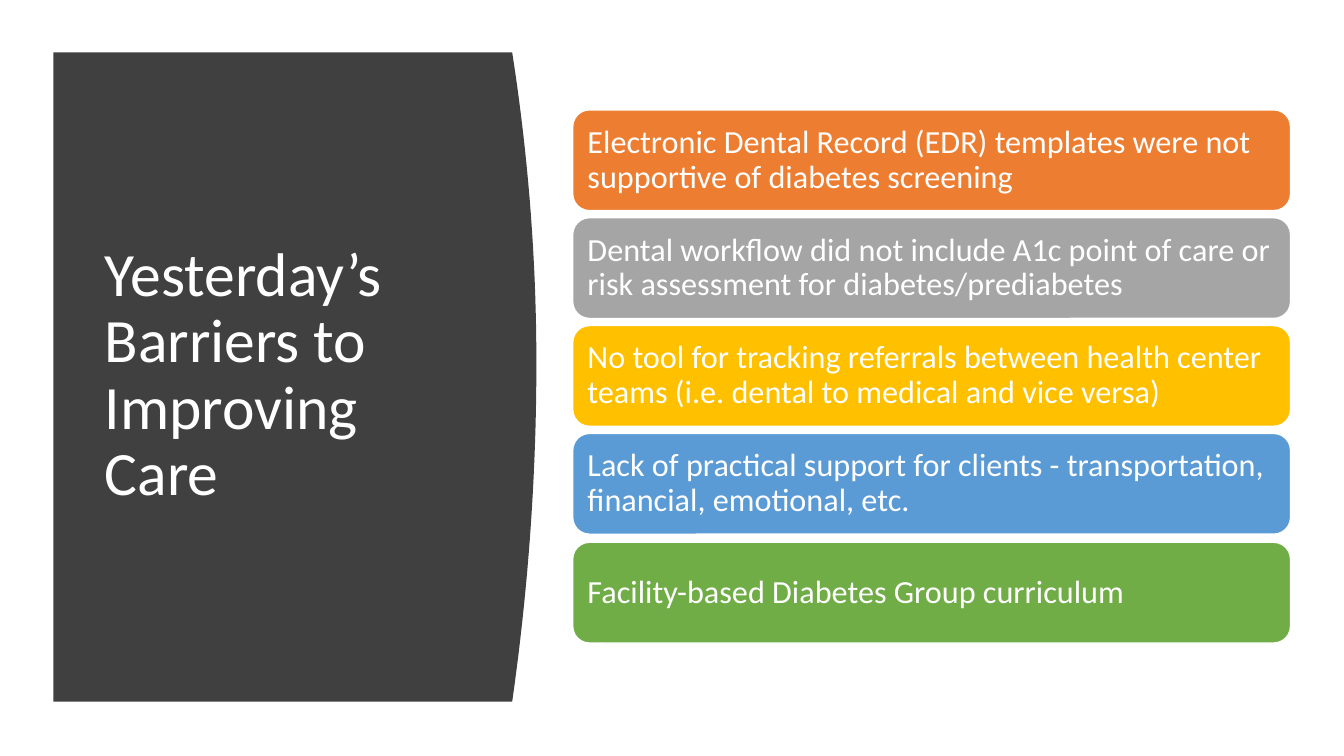
from pptx import Presentation
from pptx.dml.color import RGBColor
from pptx.enum.shapes import MSO_SHAPE
from pptx.enum.text import MSO_ANCHOR, MSO_AUTO_SIZE, PP_ALIGN
from pptx.util import Pt

PX = 9144  # EMU in one px, 100 px to the inch
WHITE = RGBColor(0xFF, 0xFF, 0xFF)
CHARCOAL = RGBColor(0x40, 0x40, 0x40)
ORANGE = RGBColor(0xED, 0x7D, 0x31)
GRAY = RGBColor(0xA5, 0xA5, 0xA5)
GOLD = RGBColor(0xFF, 0xC0, 0x00)
BLUE = RGBColor(0x5B, 0x9B, 0xD5)
GREEN = RGBColor(0x70, 0xAD, 0x47)

BARRIERS = [
    (ORANGE, "Electronic Dental Record (EDR) templates were not supportive of diabetes screening"),
    (GRAY, "Dental workflow did not include A1c point of care or risk assessment for diabetes/prediabetes"),
    (GOLD, "No tool for tracking referrals between health center teams (i.e. dental to medical and vice versa)"),
    (BLUE, "Lack of practical support for clients - transportation, financial, emotional, etc."),
    (GREEN, "Facility-based Diabetes Group curriculum"),
]


class SlideBuilder:
    font = "Calibri"

    def __init__(self, deck):
        self.page = deck.slides.add_slide(deck.slide_layouts[5])
        self.shapes = self.page.shapes

    def set_text(self, shape, text, size, inset_y):
        """Fill the shape with one left-aligned, vertically centred paragraph."""
        frame = shape.text_frame
        frame.word_wrap = True
        frame.auto_size = MSO_AUTO_SIZE.NONE
        frame.vertical_anchor = MSO_ANCHOR.MIDDLE
        frame.margin_left = frame.margin_right = 10 * PX
        frame.margin_top = frame.margin_bottom = inset_y * PX
        para = frame.paragraphs[0]
        para.alignment = PP_ALIGN.LEFT
        para.line_spacing = 0.9
        span = para.add_run()
        span.text = text
        span.font.name = self.font
        span.font.size = Pt(size)
        span.font.color.rgb = WHITE

    def curved_panel(self, left, top, right, bottom, bulge, peak, color):
        """Panel whose right side bows out by bulge, furthest at height peak."""
        def edge(y):
            reach = peak - top if y < peak else bottom - peak
            return right + bulge * (1 - ((y - peak) / reach) ** 2)

        steps = 40
        heights = [top + (bottom - top) * i / steps for i in range(steps + 1)]
        outline = [(edge(y), y) for y in heights] + [(left, bottom)]
        builder = self.shapes.build_freeform(left * PX, top * PX, scale=1.0)
        builder.add_line_segments([(round(x * PX), round(y * PX)) for x, y in outline], close=True)
        panel = builder.convert_to_shape()
        panel.shadow.inherit = False
        panel.fill.solid()
        panel.fill.fore_color.rgb = color
        panel.line.fill.background()

    def title(self, left, top, width, height, text):
        box = self.shapes.title
        box.left, box.top, box.width, box.height = (n * PX for n in (left, top, width, height))
        self.set_text(box, text, 44, 5)
        self.shapes._spTree.append(box._element)  # bring in front of the panel

    def card(self, left, top, width, height, text, color):
        box = self.shapes.add_shape(
            MSO_SHAPE.ROUNDED_RECTANGLE, *(n * PX for n in (left, top, width, height)))
        box.shadow.inherit = False
        box.fill.solid()
        box.fill.fore_color.rgb = color
        box.line.color.rgb = WHITE
        box.line.width = Pt(1)
        self.set_text(box, text, 23, 10)


def main():
    deck = Presentation()
    deck.slide_width, deck.slide_height = 1333 * PX, 750 * PX
    slide = SlideBuilder(deck)
    slide.curved_panel(53, 52, 508, 696, bulge=24, peak=360, color=CHARCOAL)
    slide.title(94, 111, 374, 524, "Yesterday’s Barriers to Improving Care")
    for row, (color, text) in enumerate(BARRIERS):
        slide.card(568, 109 + row * 429 // 4, 712, 100, text, color)
    deck.save("out.pptx")


if __name__ == "__main__":
    main()
